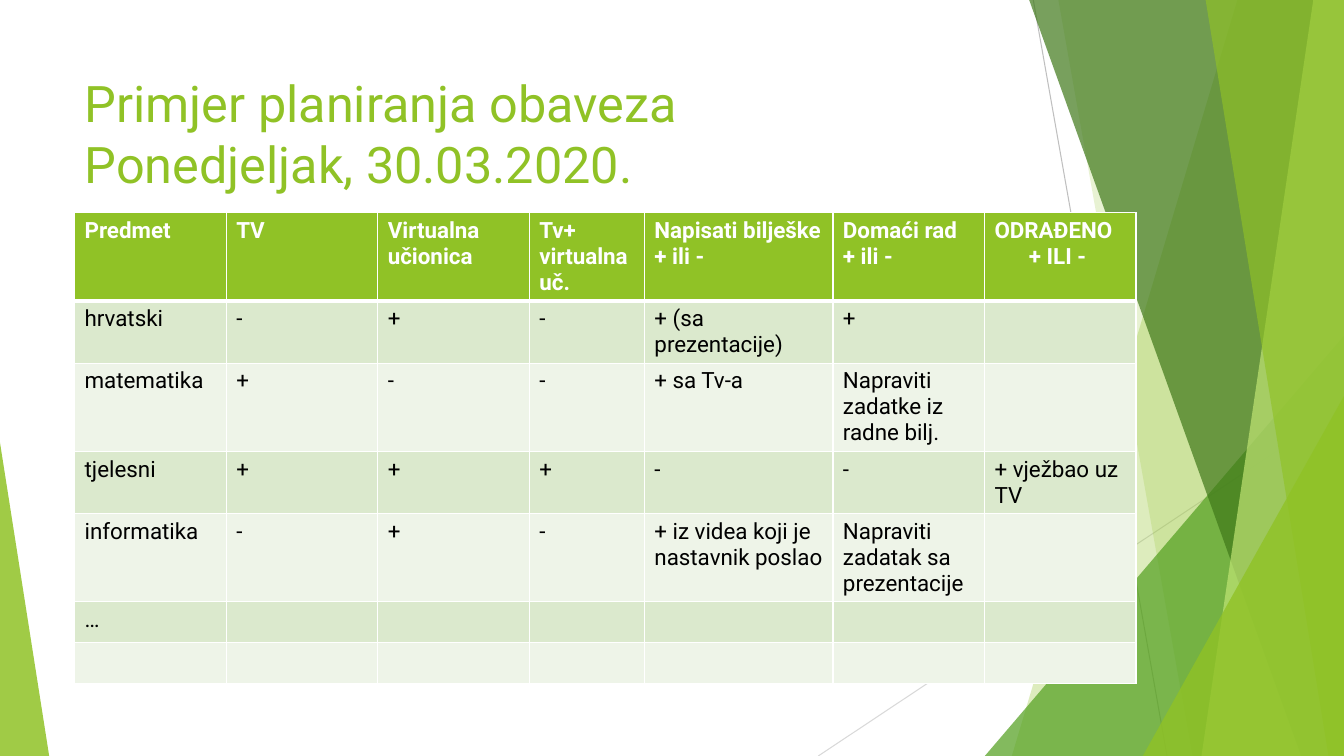
from dataclasses import dataclass

from lxml import etree
from pptx import Presentation
from pptx.dml.color import RGBColor
from pptx.enum import shapes, text
from pptx.oxml import ns
from pptx.util import Cm, Pt

LIME = RGBColor(0x90, 0xC2, 0x26)
GREEN = RGBColor(0x54, 0xA0, 0x21)
FOREST = RGBColor(0x3F, 0x78, 0x19)
PALE_LIME = RGBColor(0xC0, 0xE4, 0x74)
DARK_BAND = RGBColor(0xDB, 0xE9, 0xCD)
LIGHT_BAND = RGBColor(0xEE, 0xF4, 0xE8)
SILVER = RGBColor(0xBF, 0xBF, 0xBF)
LIGHT_SILVER = RGBColor(0xD9, 0xD9, 0xD9)
WHITE = RGBColor(0xFF, 0xFF, 0xFF)
BLACK = RGBColor(0x00, 0x00, 0x00)

FONT = "Roboto"
WIDTH, HEIGHT = 33.87, 19.05
TOP = -0.02


@dataclass
class Ray:
    start: tuple[float, float]
    end: tuple[float, float]
    colour: RGBColor


@dataclass
class Panel:
    top_x: float
    bottom_x: float
    colour: RGBColor
    opacity: int


@dataclass
class Corner:
    left: float
    top: float
    width: float
    apex: float
    colour: RGBColor
    opacity: int


RAYS = [
    Ray((26.04, 0), (29.41, HEIGHT), SILVER),
    Ray((WIDTH, 10.24), (20.62, HEIGHT), LIGHT_SILVER),
]
FACETS = [
    Panel(31.19, 25.5, LIME, 30),
    Panel(26.67, 30.05, LIME, 20),
    Corner(24.82, 8.46, 9.05, 1, GREEN, 72),
    Panel(25.93, 32.79, FOREST, 70),
    Panel(33.1, 30.28, PALE_LIME, 70),
    Panel(30.38, 33.48, LIME, 65),
    Corner(28.8, 9.98, 5.07, 1, LIME, 80),
    Corner(0, 11.15, 1.24, 0, LIME, 85),
]

COLUMN_WIDTHS = [3.82, 3.82, 3.82, 2.9, 4.75, 3.82, 3.82]
ROW_HEIGHT = 1.03
PLAN = [
    ["Predmet", "TV", "Virtualna učionica", "Tv+ virtualna uč.",
     "Napisati bilješke\n+ ili -", "Domaći rad\n+ ili -", "ODRAĐENO\n+ ILI - "],
    ["hrvatski", "-", "+", "-", "+ (sa prezentacije)", "+", ""],
    ["matematika", "+", "-", "-", "+ sa Tv-a",
     "Napraviti zadatke iz radne bilj.", ""],
    ["tjelesni", "+", "+", "+", "-", "-", "+ vježbao uz TV"],
    ["informatika", "-", "+", "-", "+ iz videa koji je nastavnik poslao",
     "Napraviti zadatak sa prezentacije", ""],
    ["…", "", "", "", "", "", ""],
    ["", "", "", "", "", "", ""],
]


def draw_ray(slide, ray: Ray) -> None:
    line = slide.shapes.add_connector(
        shapes.MSO_CONNECTOR.STRAIGHT, *map(Cm, ray.start + ray.end))
    line.line.color.rgb = ray.colour
    line.line.width = Pt(0.75)
    etree.SubElement(line._element.spPr, ns.qn("a:effectLst"))


def draw_facet(slide, facet: Panel | Corner) -> None:
    if isinstance(facet, Panel):
        outline = slide.shapes.build_freeform(Cm(facet.top_x), Cm(TOP))
        outline.add_line_segments([
            (Cm(WIDTH), Cm(TOP)),
            (Cm(WIDTH), Cm(HEIGHT)),
            (Cm(facet.bottom_x), Cm(HEIGHT)),
        ], close=True)
        shape = outline.convert_to_shape()
    else:
        shape = slide.shapes.add_shape(
            shapes.MSO_SHAPE.ISOSCELES_TRIANGLE, Cm(facet.left), Cm(facet.top),
            Cm(facet.width), Cm(HEIGHT - facet.top))
        shape.adjustments[0] = facet.apex
    shape.shadow.inherit = False
    shape.line.fill.background()
    shape.fill.solid()
    shape.fill.fore_color.rgb = facet.colour
    colour = shape._element.spPr.find(f"{ns.qn('a:solidFill')}/{ns.qn('a:srgbClr')}")
    etree.SubElement(colour, ns.qn("a:alpha"), val=str(facet.opacity * 1000))


def format_runs(frame, size: int, colour: RGBColor, bold: bool) -> None:
    for paragraph in frame.paragraphs:
        for run in paragraph.runs:
            run.font.name = FONT
            run.font.size = Pt(size)
            run.font.bold = bold
            run.font.color.rgb = colour


def set_borders(cell, top: int, bottom: int) -> None:
    properties = cell._tc.get_or_add_tcPr()
    for side, points in (("L", 1), ("R", 1), ("T", top), ("B", bottom)):
        border = etree.SubElement(
            properties, ns.qn(f"a:ln{side}"), w=str(Pt(points)))
        fill = etree.SubElement(border, ns.qn("a:solidFill"))
        etree.SubElement(fill, ns.qn("a:srgbClr"), val=str(WHITE))


def draw_title(slide) -> None:
    title = slide.shapes.title
    title.left, title.top, title.width, title.height = map(
        Cm, (1.88, 1.7, 23.88, 3.66))
    frame = title.text_frame
    frame.text = "Primjer planiranja obaveza\vPonedjeljak, 30.03.2020."
    frame.word_wrap = True
    frame.auto_size = text.MSO_AUTO_SIZE.NONE
    frame.vertical_anchor = text.MSO_ANCHOR.TOP
    frame.paragraphs[0].alignment = text.PP_ALIGN.LEFT
    format_runs(frame, 36, LIME, False)


def draw_plan(slide) -> None:
    frame = slide.shapes.add_table(
        len(PLAN), len(COLUMN_WIDTHS), Cm(1.88), Cm(5.36),
        Cm(sum(COLUMN_WIDTHS)), Cm(ROW_HEIGHT * len(PLAN)))
    plan = frame.table
    plan.horz_banding = False
    for column, width in zip(plan.columns, COLUMN_WIDTHS):
        column.width = Cm(width)
    for row, entries in enumerate(PLAN):
        header = row == 0
        band = LIME if header else DARK_BAND if row % 2 else LIGHT_BAND
        for column, entry in enumerate(entries):
            cell = plan.cell(row, column)
            cell.text_frame.text = entry
            format_runs(cell.text_frame, 16, WHITE if header else BLACK, header)
            set_borders(cell, top=3 if row == 1 else 1, bottom=3 if header else 1)
            cell.fill.solid()
            cell.fill.fore_color.rgb = band
    done_header = plan.cell(0, len(COLUMN_WIDTHS) - 1)
    done_header.text_frame.paragraphs[1].alignment = text.PP_ALIGN.CENTER


def main() -> None:
    deck = Presentation()
    deck.slide_width, deck.slide_height = Cm(WIDTH), Cm(HEIGHT)
    slide = deck.slides.add_slide(deck.slide_layouts[5])
    for ray in RAYS:
        draw_ray(slide, ray)
    for facet in FACETS:
        draw_facet(slide, facet)
    draw_title(slide)
    draw_plan(slide)
    deck.save("out.pptx")


if __name__ == "__main__":
    main()
